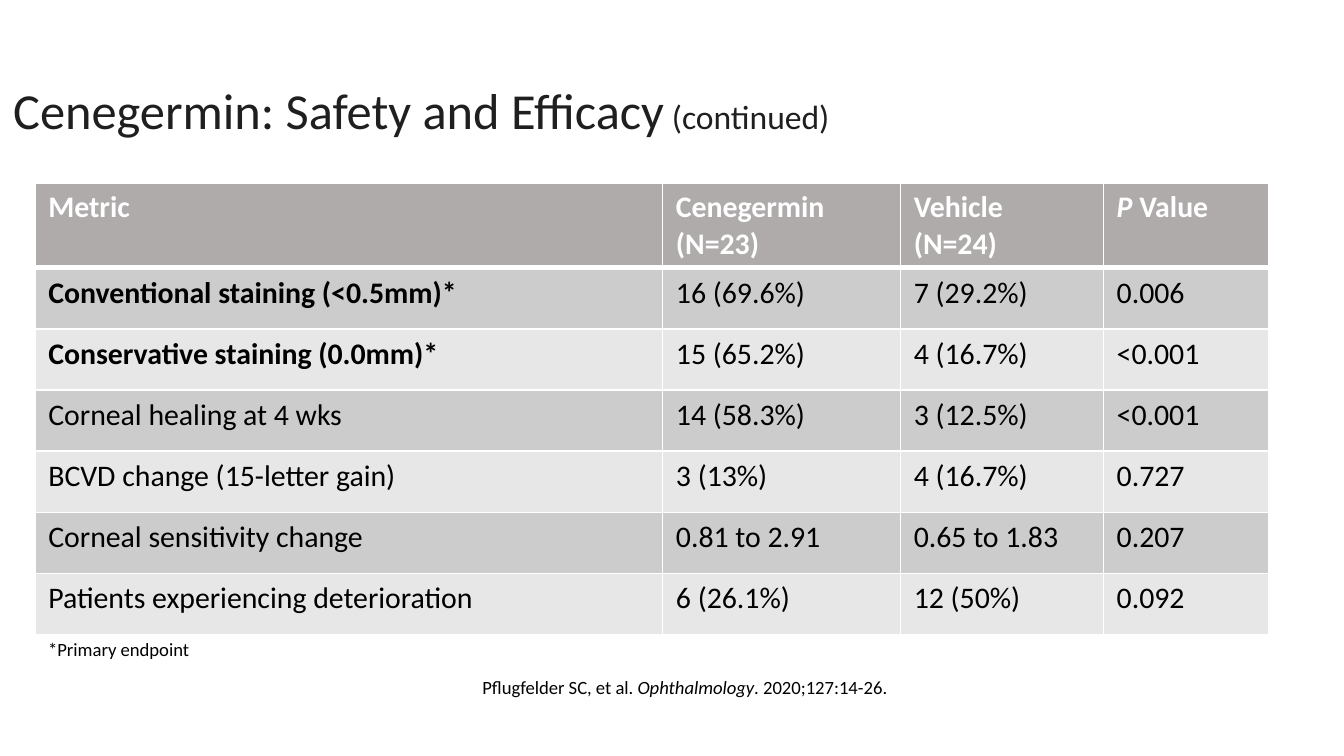
"""Build the cenegermin safety and efficacy slide."""
from dataclasses import dataclass

from lxml import etree
from pptx import Presentation
from pptx.dml.color import RGBColor
from pptx.enum import text as txt
from pptx.oxml import ns
from pptx.util import Inches, Pt

COLOURS = {"title": "1F1F1F", "body": "000000", "white": "FFFFFF",
           "header": "AFABAB", "odd": "CCCCCC", "even": "E7E7E7"}
FONT = "Calibri"
SLIDE_WIDTH = 10
SLIDE_HEIGHT = SLIDE_WIDTH * 9 / 16
COLUMN_WIDTHS = (4.67, 1.77, 1.51, 1.23)
HEADER_HEIGHT, BODY_HEIGHT = 0.62, 2.73


@dataclass(frozen=True)
class Span:
    text: str
    size: float = 16
    colour: str = "body"
    bold: bool = False
    italic: bool = False


@dataclass(frozen=True)
class Label:
    left: float
    top: float
    width: float
    height: float
    spans: tuple[Span, ...]
    anchor: txt.MSO_ANCHOR = txt.MSO_ANCHOR.TOP
    line_spacing: float = 1.0


@dataclass(frozen=True)
class Metric:
    name: str
    cenegermin: str
    vehicle: str
    p_value: str
    primary: bool = False


LABELS = (
    Label(0, 0.3, 7.89, 1.09,
          (Span("Cenegermin: Safety and Efficacy", 27, "title"),
           Span(" (continued)", 18, "title")),
          txt.MSO_ANCHOR.MIDDLE, 0.9),
    Label(3.49, 4.98, 6.3, 0.27,
          (Span("Pflugfelder SC, et al. ", 10),
           Span("Ophthalmology", 10, italic=True),
           Span(". 2020;127:14-26.", 10))),
    Label(0.26, 4.7, 2.11, 0.27, (Span("*Primary endpoint", 10),)),
)


def heading(text: str, italic: bool = False) -> Span:
    """Return a span in the header style."""
    return Span(text, colour="white", bold=True, italic=italic)


HEADINGS = (
    ((heading("Metric"),),),
    ((heading("Cenegermin"),), (heading("(N=23)"),)),
    ((heading("Vehicle"),), (heading("(N=24)"),)),
    ((heading("P ", italic=True), heading("Value")),),
)
METRICS = (
    Metric("Conventional staining (<0.5mm)*", "16 (69.6%)", "7 (29.2%)", "0.006", True),
    Metric("Conservative staining (0.0mm)*", "15 (65.2%)", "4 (16.7%)", "<0.001", True),
    Metric("Corneal healing at 4 wks", "14 (58.3%)", "3 (12.5%)", "<0.001"),
    Metric("BCVD change (15-letter gain)", "3 (13%)", "4 (16.7%)", "0.727"),
    Metric("Corneal sensitivity change", "0.81 to 2.91", "0.65 to 1.83", "0.207"),
    Metric("Patients experiencing deterioration", "6 (26.1%)", "12 (50%)", "0.092"),
)


def write_spans(para, spans: tuple[Span, ...]) -> None:
    """Add styled runs to a paragraph."""
    for span in spans:
        run = para.add_run()
        run.text = span.text
        font = run.font
        font.name, font.size = FONT, Pt(span.size)
        font.bold, font.italic = span.bold, span.italic
        font.color.rgb = RGBColor.from_string(COLOURS[span.colour])


def draw_label(page, label: Label) -> None:
    """Draw a one-paragraph text box."""
    box = page.shapes.add_textbox(Inches(label.left), Inches(label.top),
                                  Inches(label.width), Inches(label.height))
    frame = box.text_frame
    frame.word_wrap = True
    frame.vertical_anchor = label.anchor
    para = frame.paragraphs[0]
    para.line_spacing = label.line_spacing
    write_spans(para, label.spans)


def set_borders(cell, top: float, bottom: float) -> None:
    """Give a cell white borders with the given top and bottom widths."""
    properties = cell._tc.get_or_add_tcPr()
    for side, width in (("L", 1), ("R", 1), ("T", top), ("B", bottom)):
        line = etree.SubElement(properties, ns.qn(f"a:ln{side}"), w=str(Pt(width)))
        fill = etree.SubElement(line, ns.qn("a:solidFill"))
        etree.SubElement(fill, ns.qn("a:srgbClr"), val=COLOURS["white"])


def fill_cell(cell, paragraphs: tuple[tuple[Span, ...], ...], colour: str,
              top: float = 1, bottom: float = 1) -> None:
    """Write, border and fill one table cell."""
    set_borders(cell, top, bottom)
    cell.fill.solid()
    cell.fill.fore_color.rgb = RGBColor.from_string(COLOURS[colour])
    frame = cell.text_frame
    for index, spans in enumerate(paragraphs):
        para = frame.add_paragraph() if index else frame.paragraphs[0]
        write_spans(para, spans)


def draw_table(page) -> None:
    """Draw the comparison of cenegermin and vehicle."""
    table = page.shapes.add_table(len(METRICS) + 1, len(COLUMN_WIDTHS), Inches(0.26),
                                  Inches(1.36), Inches(sum(COLUMN_WIDTHS)),
                                  Inches(HEADER_HEIGHT + BODY_HEIGHT)).table
    for column, width in zip(table.columns, COLUMN_WIDTHS):
        column.width = Inches(width)
    for index, row in enumerate(table.rows):
        row.height = Inches(BODY_HEIGHT / len(METRICS) if index else HEADER_HEIGHT)
    for column, paragraphs in enumerate(HEADINGS):
        fill_cell(table.cell(0, column), paragraphs, "header", bottom=3)
    for row, metric in enumerate(METRICS, start=1):
        spans = (Span(metric.name, bold=metric.primary), Span(metric.cenegermin),
                 Span(metric.vehicle), Span(metric.p_value))
        for column, span in enumerate(spans):
            fill_cell(table.cell(row, column), ((span,),),
                      "odd" if row % 2 else "even", top=3 if row == 1 else 1)


def main() -> None:
    """Build and save the deck."""
    deck = Presentation()
    deck.slide_width, deck.slide_height = Inches(SLIDE_WIDTH), Inches(SLIDE_HEIGHT)
    page = deck.slides.add_slide(deck.slide_layouts[6])
    title, citation, footnote = LABELS
    draw_label(page, title)
    draw_label(page, citation)
    draw_table(page)
    draw_label(page, footnote)
    deck.save("out.pptx")


if __name__ == "__main__":
    main()
